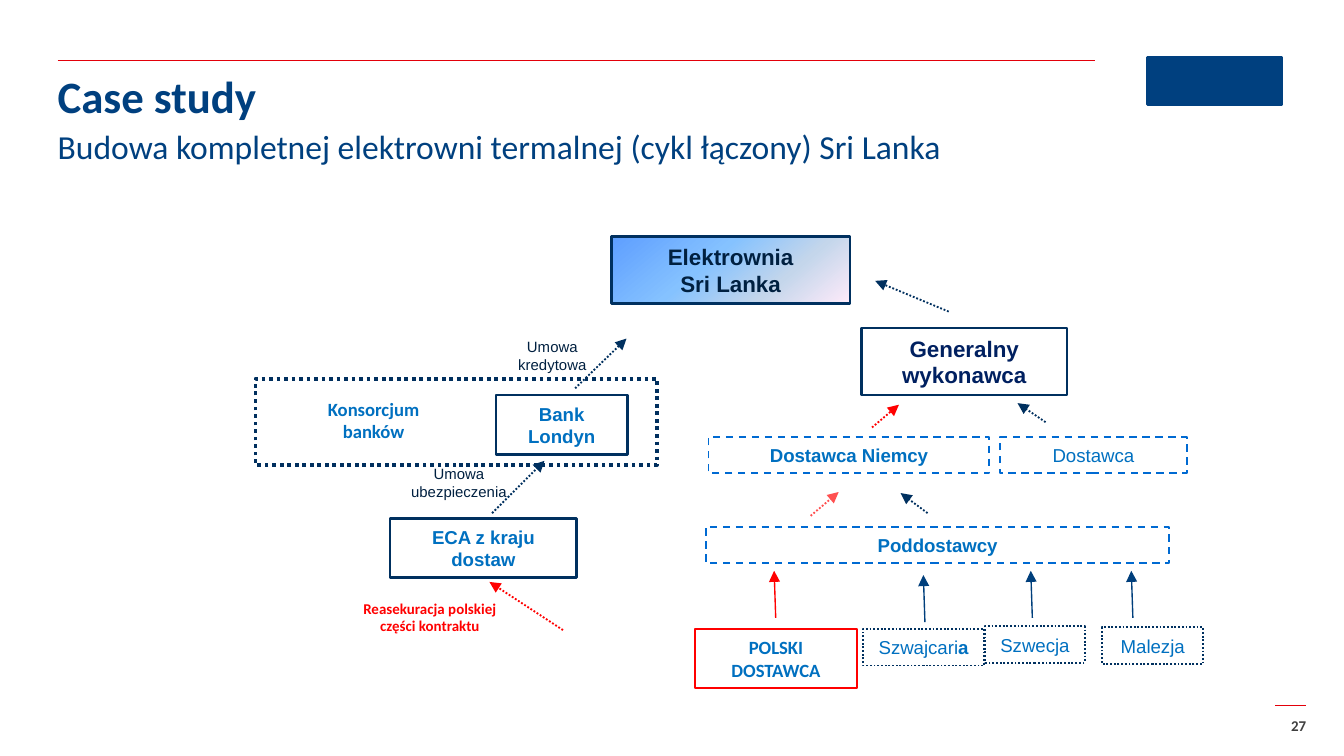
from lxml.etree import SubElement
from pptx import Presentation
from pptx.dml.color import RGBColor
from pptx.enum.dml import MSO_LINE as Dash
from pptx.enum.shapes import MSO_CONNECTOR, MSO_SHAPE
from pptx.enum.text import MSO_ANCHOR as Anchor, PP_ALIGN as Align
from pptx.oxml.ns import qn
from pptx.util import Cm, Pt

NAVY, INK, BLUE = "00305F", "002040", "0070C0"
DASH_BLUE, BRAND, STEEL = "006AD2", "00407F", "003F7C"
RED, BRAND_RED, CORAL = "FF0000", "E3000A", "FF5050"
TWO_LINES, ONE_LINE = 1.12, 0.69
DOTTED, DASHED = Dash.ROUND_DOT, Dash.DASH


def color(hex_value):
    return RGBColor.from_string(hex_value)


class Diagram:
    """Holds the style and the slide that is being drawn."""

    def __init__(self, deck):
        self.font = "Arial"
        self.text_size = 10
        self.slide = deck.slides.add_slide(deck.slide_layouts[2])

    def heading(self, title, subtitle):
        self.slide.shapes.title.element.getparent().remove(self.slide.shapes.title.element)
        body = self.slide.placeholders[1]
        body.left, body.top, body.width, body.height = Cm(1.09), Cm(1.3), Cm(19.61), Cm(1.8)
        frame = body.text_frame
        frame.text = f"{title}\n{subtitle}"
        frame.vertical_anchor = Anchor.TOP
        self.clear_margins(frame)
        for paragraph, size, bold in zip(frame.paragraphs, (24, 18), (True, False)):
            paragraph.space_before = Pt(2)
            self.style(paragraph, BRAND, size, bold, "Calibri", Align.LEFT)

    def clear_margins(self, frame):
        frame.margin_left = frame.margin_right = frame.margin_top = frame.margin_bottom = 0

    def style(self, paragraph, ink, size=None, bold=False, font=None, align=Align.CENTER):
        paragraph.alignment = align
        paragraph.font.name = font or self.font
        paragraph.font.size = Pt(size or self.text_size)
        paragraph.font.bold = bold
        paragraph.font.color.rgb = color(ink)

    def label(self, text, x, y, width, height, ink, **style):
        frame = self.slide.shapes.add_textbox(Cm(x), Cm(y), Cm(width), Cm(height)).text_frame
        frame.word_wrap = True
        frame.text = text
        self.style(frame.paragraphs[0], ink, **style)
        return frame

    def outline(self, line, ink, weight, dash=None):
        line.color.rgb = color(ink)
        line.width = Pt(weight)
        if dash:
            line.dash_style = dash

    def block(self, x, y, width, height, edge=NAVY, weight=1.25, dash=None):
        shape = self.slide.shapes.add_shape(
            MSO_SHAPE.RECTANGLE, Cm(x), Cm(y), Cm(width), Cm(height))
        shape.shadow.inherit = False
        shape.fill.background()
        self.outline(shape.line, edge, weight, dash)
        return shape

    def box(self, text, x, y, width, height, edge=NAVY, weight=1.25, dash=None,
            ink=BLUE, **style):
        shape = self.block(x, y, width, height, edge, weight, dash)
        shape.text_frame.word_wrap = True
        shape.text_frame.text = text
        for paragraph in shape.text_frame.paragraphs:
            self.style(paragraph, ink, **style)
        return shape

    def shade(self, shape, stops, angle):
        """Fill with a gradient of (percent, colour) stops."""
        shape.fill.gradient()
        shape.fill.gradient_angle = 360 - angle
        stop_list = shape.element.spPr.find(".//" + qn("a:gsLst"))
        stop_list.clear()
        for percent, tint in stops:
            stop = SubElement(stop_list, qn("a:gs"), pos=str(percent * 1000))
            SubElement(stop, qn("a:srgbClr"), val=tint)

    def rule(self, start, end, ink=BRAND_RED, weight=0.5, dash=None):
        (x1, y1), (x2, y2) = start, end
        line = self.slide.shapes.add_connector(
            MSO_CONNECTOR.STRAIGHT, Cm(x1), Cm(y1), Cm(x2), Cm(y2))
        self.outline(line.line, ink, weight, dash)
        SubElement(line.element.spPr, qn("a:effectLst"))
        return line

    def arrow(self, start, end, ink=NAVY, weight=1, dash=DOTTED):
        line = self.rule(start, end, ink, weight, dash)
        SubElement(line.line._get_or_add_ln(), qn("a:tailEnd"), type="triangle")


def main():
    deck = Presentation()
    deck.slide_width, deck.slide_height = Cm(25.4), Cm(14.29)
    diagram = Diagram(deck)

    # Page frame
    page_number = diagram.label("27", 23.9, 13.54, 0.79, 0.41, "3F3F3F", size=8,
                                bold=True, font="Calibri", align=Align.RIGHT)
    diagram.clear_margins(page_number)
    diagram.rule((24.1, 13.34), (24.69, 13.34))
    diagram.rule((1.09, 1.14), (20.7, 1.14))
    logo_spot = diagram.block(21.69, 1.09, 2.54, 0.89, BRAND)
    logo_spot.fill.solid()
    logo_spot.fill.fore_color.rgb = color(BRAND)
    diagram.heading("Case study",
                    "Budowa kompletnej elektrowni termalnej (cykl łączony) Sri Lanka")

    # Project and main contractor
    plant = diagram.box("Elektrownia\nSri Lanka", 11.56, 4.47, 4.5, 1.27,
                        ink=INK, size=12, bold=True)
    diagram.shade(plant, [(0, "5E9EFF"), (40, "85C2FF"), (70, "C4D6EB"), (100, "FFEBFA")], 50)
    diagram.box("Generalny wykonawca", 16.28, 6.2, 3.89, 1.27,
                ink="002060", size=12, bold=True)

    # Financing and insurance
    diagram.block(4.83, 7.16, 7.59, 1.63, "002F5E", 2, DOTTED)
    diagram.label("Konsorcjum banków", 5.36, 7.39, 3.4, TWO_LINES, BLUE,
                  bold=True, font="Calibri")
    diagram.box("Bank\nLondyn", 9.37, 7.47, 2.49, TWO_LINES, bold=True)
    diagram.box("ECA z kraju dostaw", 7.37, 9.8, 3.53, TWO_LINES, bold=True)
    diagram.label("Umowa kredytowa", 9.4, 6.25, 2.08, 0.94, INK, size=8)
    diagram.label("Umowa ubezpieczenia", 7.39, 8.66, 2.57, 0.94, INK, size=8)
    diagram.label("Reasekuracja polskiej części kontraktu", 6.27, 11.2, 3.71, 0.94, RED,
                  size=8, bold=True, font="Calibri")

    # Suppliers and subcontractors
    for name, x, y, width, bold in [
        ("Dostawca Niemcy", 13.39, 8.26, 5.31, True),
        ("Dostawca", 18.9, 8.26, 3.53, False),
        ("Poddostawcy", 13.34, 9.96, 8.76, True),
    ]:
        diagram.box(name, x, y, width, ONE_LINE, DASH_BLUE, 1, DASHED, bold=bold)

    diagram.box("POLSKI DOSTAWCA", 13.13, 11.89, 3.07, TWO_LINES, RED,
                bold=True, font="Calibri")
    for country, x, y, width in [
        ("Szwajcari", 16.31, 11.89, 2.29),
        ("Szwecja", 18.62, 11.84, 1.88),
        ("Malezja", 20.83, 11.86, 1.91),
    ]:
        supplier = diagram.box(country, x, y, width, ONE_LINE, NAVY, 1, DOTTED)
        if country == "Szwajcari":
            ending = supplier.text_frame.paragraphs[0].add_run()
            ending.text = "a"
            ending.font.bold = True

    # Contract flows
    for start, end, ink in [
        ((17.93, 5.89), (16.54, 5.31), NAVY),
        ((10.87, 7.34), (11.84, 6.4), NAVY),
        ((9.3, 9.7), (10.29, 8.71), NAVY),
        ((10.64, 11.91), (9.25, 11), RED),
        ((16.48, 8.08), (16.99, 7.65), RED),
        ((19.76, 7.98), (19.23, 7.62), NAVY),
        ((15.32, 9.75), (15.85, 9.3), CORAL),
        ((17.53, 9.7), (17.02, 9.32), NAVY),
    ]:
        diagram.arrow(start, end, ink)

    # Deliveries to the subcontractors
    for x, y, ink in [(14.66, 11.68, RED), (17.48, 11.76, STEEL),
                      (19.51, 11.68, STEEL), (21.41, 11.68, STEEL)]:
        diagram.arrow((x, y), (x - 0.03, y - 0.89), ink, 0.75, None)

    deck.save("out.pptx")


if __name__ == "__main__":
    main()
